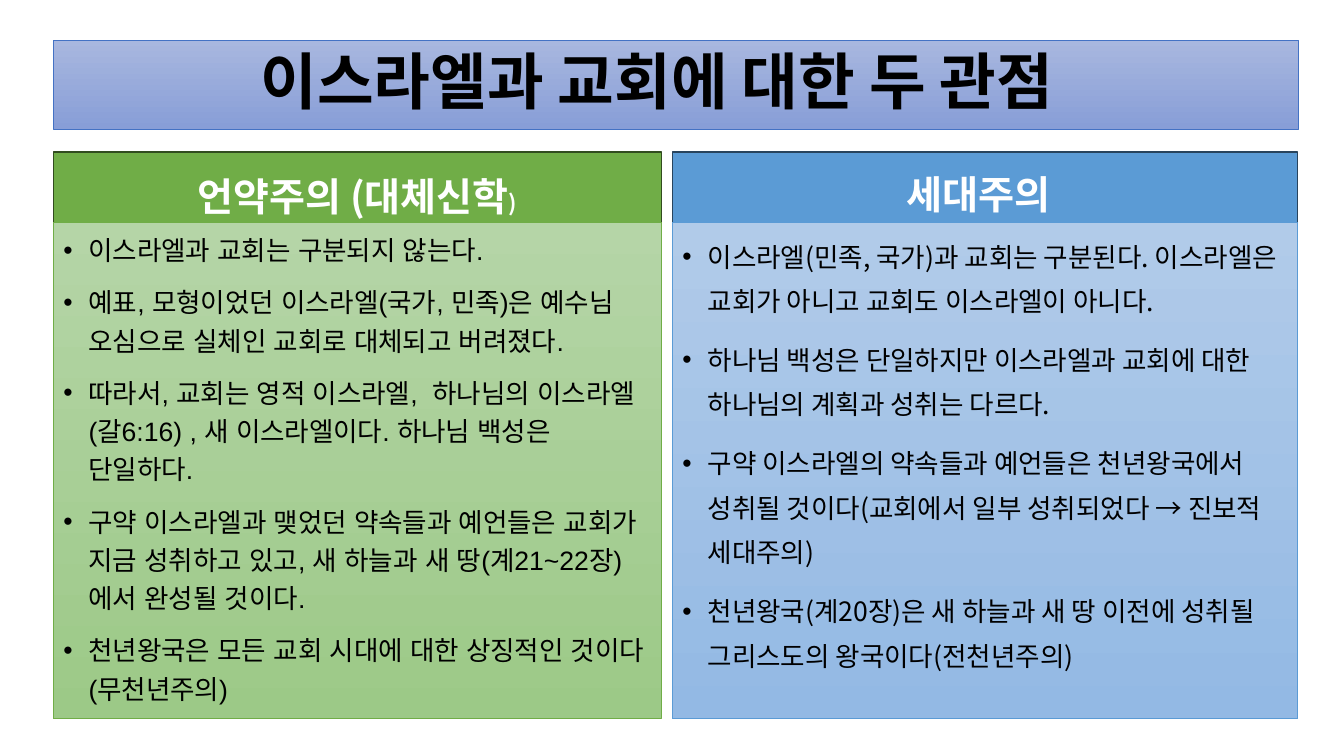
from pptx import Presentation
from pptx.dml.color import RGBColor
from pptx.enum.shapes import MSO_SHAPE
from pptx.enum.text import MSO_ANCHOR, PP_ALIGN
from pptx.util import Inches, Pt
from lxml.etree import SubElement
from pptx.oxml.ns import qn

COLORS = {
    "black": "000000", "white": "FFFFFF",
    "title_top": "A8B7DF", "title_bottom": "889ED7", "title_line": "4472C4",
    "green": "70AD47", "green_line": "314C1F", "green_top": "B5D5A7", "green_bottom": "9CC987",
    "blue": "5B9BD5", "blue_line": "28445D", "blue_top": "B1CBE9", "blue_bottom": "93B9E4",
}
KOREAN = "Noto Sans CJK KR"


def style_box(box, fills, line, width, anchor):
    """Fill with one colour, or with a top-to-bottom gradient of two, and outline the box."""
    if len(fills) == 1:
        box.fill.solid()
        box.fill.fore_color.rgb = RGBColor.from_string(COLORS[fills[0]])
    else:
        box.fill.gradient()
        box.fill.gradient_angle = 270
        for stop, name, position in zip(box.fill.gradient_stops, fills, (0, 1)):
            stop.color.rgb = RGBColor.from_string(COLORS[name])
            stop.position = position
    box.line.color.rgb = RGBColor.from_string(COLORS[line])
    box.line.width = Pt(width)
    box.shadow.inherit = False
    box.text_frame.word_wrap = True
    box.text_frame.vertical_anchor = anchor


def add_span(para, text, size, font, color, bold=False):
    span = para.add_run()
    span.text = text
    for name, value in {"size": Pt(size), "name": font, "bold": bold}.items():
        setattr(span.font, name, value)
    span.font.color.rgb = RGBColor.from_string(COLORS[color])
    for tag in ("a:ea", "a:cs"):
        SubElement(span.font._element, qn(tag), typeface=font)


deck = Presentation()
deck.slide_width, deck.slide_height = Inches(13.33), Inches(7.5)
page = deck.slides.add_slide(deck.slide_layouts[5])

title = page.shapes.title
title.left, title.top, title.width, title.height = map(Inches, (0.53, 0.4, 12.35, 0.88))
style_box(title, ("title_top", "title_bottom"), "title_line", 0.5, MSO_ANCHOR.MIDDLE)
title.text_frame.margin_right = Inches(0.47)
para = title.text_frame.paragraphs[0]
para.alignment, para.line_spacing = PP_ALIGN.CENTER, 0.9
add_span(para, "이스라엘과 교회에 대한 두 관점", 44, KOREAN, "black", True)

views = [
    {
        "left": 0.53, "width": 6.03, "color": "green", "font": "Arial",
        "heading": [("언약주의 (대체신학", 27.9), (")", 15.9)],
        "heading_spacing": 0.7, "heading_inset": 0.1, "spacing": 1.2,
        "points": [
            "이스라엘과 교회는 구분되지 않는다.",
            "예표, 모형이었던 이스라엘(국가, 민족)은 예수님 오심으로 실체인 교회로 대체되고 버려졌다.",
            "따라서, 교회는 영적 이스라엘,  하나님의 이스라엘(갈6:16) , 새 이스라엘이다. 하나님 백성은 단일하다.",
            "구약 이스라엘과 맺었던 약속들과 예언들은 교회가 지금 성취하고 있고, 새 하늘과 새 땅(계21~22장)에서 완성될 것이다.",
            "천년왕국은 모든 교회 시대에 대한 상징적인 것이다(무천년주의)",
        ],
    },
    {
        "left": 6.67, "width": 6.2, "color": "blue", "font": KOREAN,
        "heading": [("세대주의", 28)],
        "heading_spacing": 0.9, "heading_inset": 0.22, "spacing": 1.4,
        "points": [
            "이스라엘(민족, 국가)과 교회는 구분된다. 이스라엘은 교회가 아니고 교회도 이스라엘이 아니다.",
            "하나님 백성은 단일하지만 이스라엘과 교회에 대한 하나님의 계획과 성취는 다르다.",
            "구약 이스라엘의 약속들과 예언들은 천년왕국에서 성취될 것이다(교회에서 일부 성취되었다 → 진보적 세대주의)",
            "천년왕국(계20장)은 새 하늘과 새 땅 이전에 성취될 그리스도의 왕국이다(전천년주의)",
        ],
    },
]

for view in views:
    left, width, color = Inches(view["left"]), Inches(view["width"]), view["color"]

    heading = page.shapes.add_shape(MSO_SHAPE.RECTANGLE, left, Inches(1.51), width, Inches(0.7))
    style_box(heading, (color,), f"{color}_line", 1, MSO_ANCHOR.BOTTOM)
    heading.text_frame.margin_right = Inches(view["heading_inset"])
    para = heading.text_frame.paragraphs[0]
    para.alignment, para.line_spacing = PP_ALIGN.CENTER, view["heading_spacing"]
    for text, size in view["heading"]:
        add_span(para, text, size, KOREAN, "white", True)

    body = page.shapes.add_shape(MSO_SHAPE.RECTANGLE, left, Inches(2.21), width, Inches(4.92))
    style_box(body, (f"{color}_top", f"{color}_bottom"), color, 0.5, MSO_ANCHOR.TOP)
    for index, point in enumerate(view["points"]):
        para = body.text_frame.add_paragraph() if index else body.text_frame.paragraphs[0]
        para.alignment, para.line_spacing, para.space_before = PP_ALIGN.LEFT, view["spacing"], Pt(10)
        props = para._p.get_or_add_pPr()
        props.set("marL", str(Inches(0.25)))
        props.set("indent", str(-Inches(0.25)))
        SubElement(props, qn("a:buFont"), typeface="Arial")
        SubElement(props, qn("a:buChar"), char="•")
        add_span(para, point, 19, view["font"], "black")

deck.save("out.pptx")
